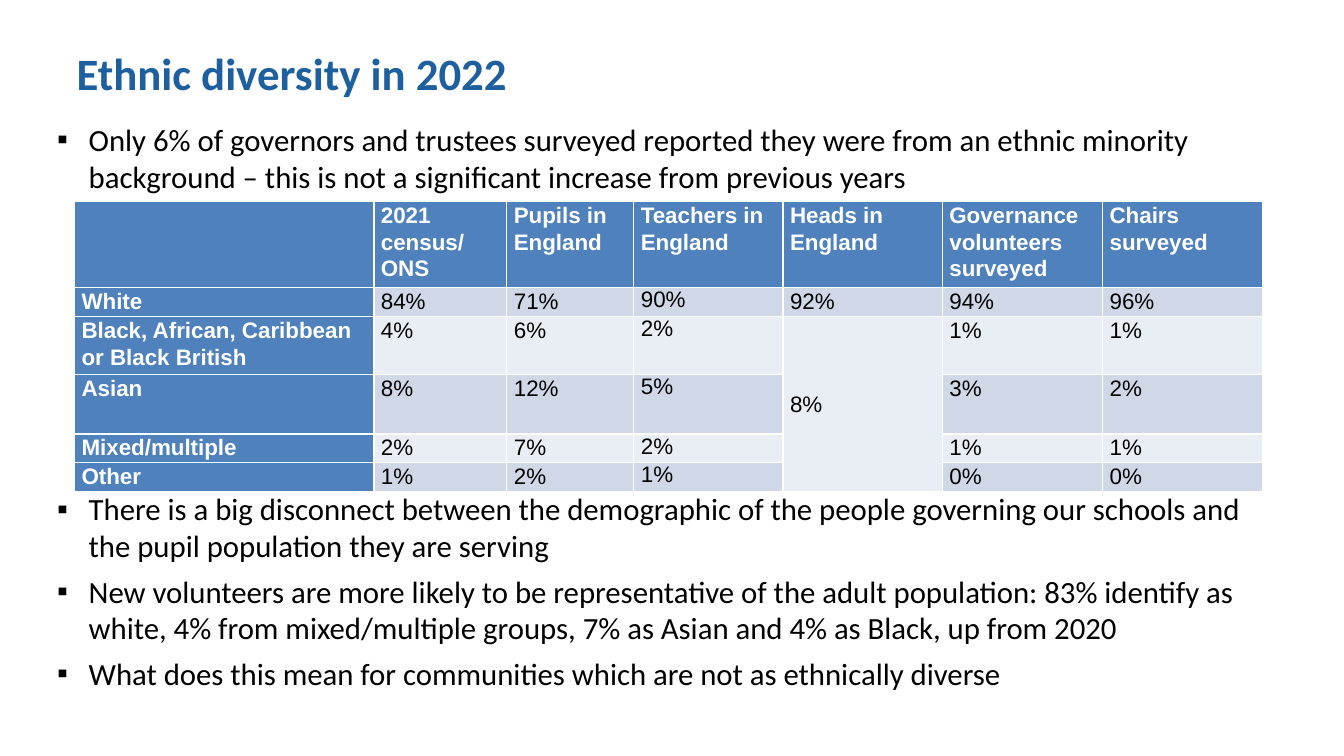
from lxml import etree
from pptx import Presentation
from pptx.dml.color import RGBColor
from pptx.enum.text import MSO_ANCHOR, PP_ALIGN
from pptx.oxml.ns import qn
from pptx.util import Pt

COLORS = {"title": "1E5F9F", "body": "000000", "header": "4F81BD",
          "header_text": "FFFFFF", "odd": "D0D8E8", "even": "E9EDF4"}

FINDING = ["Only 6% of governors and trustees surveyed reported they were from an "
           "ethnic minority background – this is not a significant increase from "
           "previous years"]
IMPLICATIONS = [
    "There is a big disconnect between the demographic of the people governing our "
    "schools and the pupil population they are serving",
    "New volunteers are more likely to be representative of the adult population: 83% "
    "identify as white, 4% from mixed/multiple groups, 7% as Asian and 4% as Black, up "
    "from 2020",
    "What does this mean for communities which are not as ethnically diverse",
]
ETHNICITY = [
    ["", "2021 census/ ONS", "Pupils in England", "Teachers in England",
     "Heads in England", "Governance volunteers surveyed", "Chairs surveyed"],
    ["White", "84%", "71%", "90%", "92%", "94%", "96%"],
    ["Black, African, Caribbean or Black British", "4%", "6%", "2%", "8%", "1%", "1%"],
    ["Asian", "8%", "12%", "5%", "", "3%", "2%"],
    ["Mixed/multiple", "2%", "7%", "2%", "", "1%", "1%"],
    ["Other", "1%", "2%", "1%", "", "0%", "0%"],
]
COLUMN_WIDTHS = [213.8, 95, 90.7, 106.6, 113.8, 114.5, 114.5]
ROW_HEIGHTS = [60.5, 20, 41.5, 42.3, 20, 20.5]
TEACHERS, HEADS = 3, 4


def color(name):
    return RGBColor.from_string(COLORS[name])


def style_font(font, name, size, color_name, bold=False):
    font.name, font.size, font.bold = name, Pt(size), bold
    font.color.rgb = color(color_name)


def add_title(slide, text, left, top, width, height):
    title = slide.shapes.title
    title.left, title.top, title.width, title.height = map(Pt, (left, top, width, height))
    frame = title.text_frame
    frame.text = text
    frame.vertical_anchor = MSO_ANCHOR.TOP
    frame.margin_top = Pt(5)
    frame.paragraphs[0].alignment = PP_ALIGN.LEFT
    style_font(frame.paragraphs[0].runs[0].font, "Calibri", 32, "title", True)


def add_bullets(slide, points, left, top, width, height):
    frame = slide.shapes.add_textbox(*map(Pt, (left, top, width, height))).text_frame
    frame.word_wrap = True
    frame.text = "\n".join(points)
    for paragraph in frame.paragraphs:
        properties = paragraph._p.get_or_add_pPr()
        properties.set("marL", str(Pt(22.5)))
        properties.set("indent", str(-Pt(22.5)))
        paragraph.space_after = Pt(6)
        etree.SubElement(properties, qn("a:buFont"), typeface="Arial")
        etree.SubElement(properties, qn("a:buChar"), char="▪")
        style_font(paragraph.runs[0].font, "Calibri", 22, "body")


def fill_cell(cell, text, row, column):
    is_header = row == 0 or column == 0
    cell.margin_left = cell.margin_right = Pt(5)
    cell.margin_top = cell.margin_bottom = 0
    cell.fill.solid()
    band = "header" if is_header else "odd" if row % 2 else "even"
    cell.fill.fore_color.rgb = color(band)
    cell.text_frame.text = text
    paragraph = cell.text_frame.paragraphs[0]
    paragraph.line_spacing = 1 if column == TEACHERS and row else 1.07
    style_font(paragraph.font, "Arial", 16, "header_text" if is_header else "body", is_header)
    for run in paragraph.runs:
        style_font(run.font, "Arial", 16, "header_text" if is_header else "body", is_header)


def add_ethnicity_table(slide, left, top):
    table = slide.shapes.add_table(
        len(ETHNICITY), len(COLUMN_WIDTHS), Pt(left), Pt(top),
        Pt(sum(COLUMN_WIDTHS)), Pt(sum(ROW_HEIGHTS))).table
    table.first_col = True
    for column, width in zip(table.columns, COLUMN_WIDTHS):
        column.width = Pt(width)
    for row, height in zip(table.rows, ROW_HEIGHTS):
        row.height = Pt(height)
    for r, values in enumerate(ETHNICITY):
        for c, value in enumerate(values):
            fill_cell(table.cell(r, c), value, r, c)
    heads_minority = table.cell(2, HEADS)
    heads_minority.merge(table.cell(5, HEADS))
    heads_minority.vertical_anchor = MSO_ANCHOR.MIDDLE


def main():
    presentation = Presentation()
    presentation.slide_width, presentation.slide_height = Pt(960), Pt(540)
    slide = presentation.slides.add_slide(presentation.slide_layouts[5])
    add_title(slide, "Ethnic diversity in 2022", 47.5, 27.4, 864, 55.4)
    add_bullets(slide, FINDING, 33.8, 82.8, 892, 61)
    add_ethnicity_table(slide, 53.3, 144)
    add_bullets(slide, IMPLICATIONS, 33.8, 346.4, 892, 154)
    presentation.save("out.pptx")


if __name__ == "__main__":
    main()
